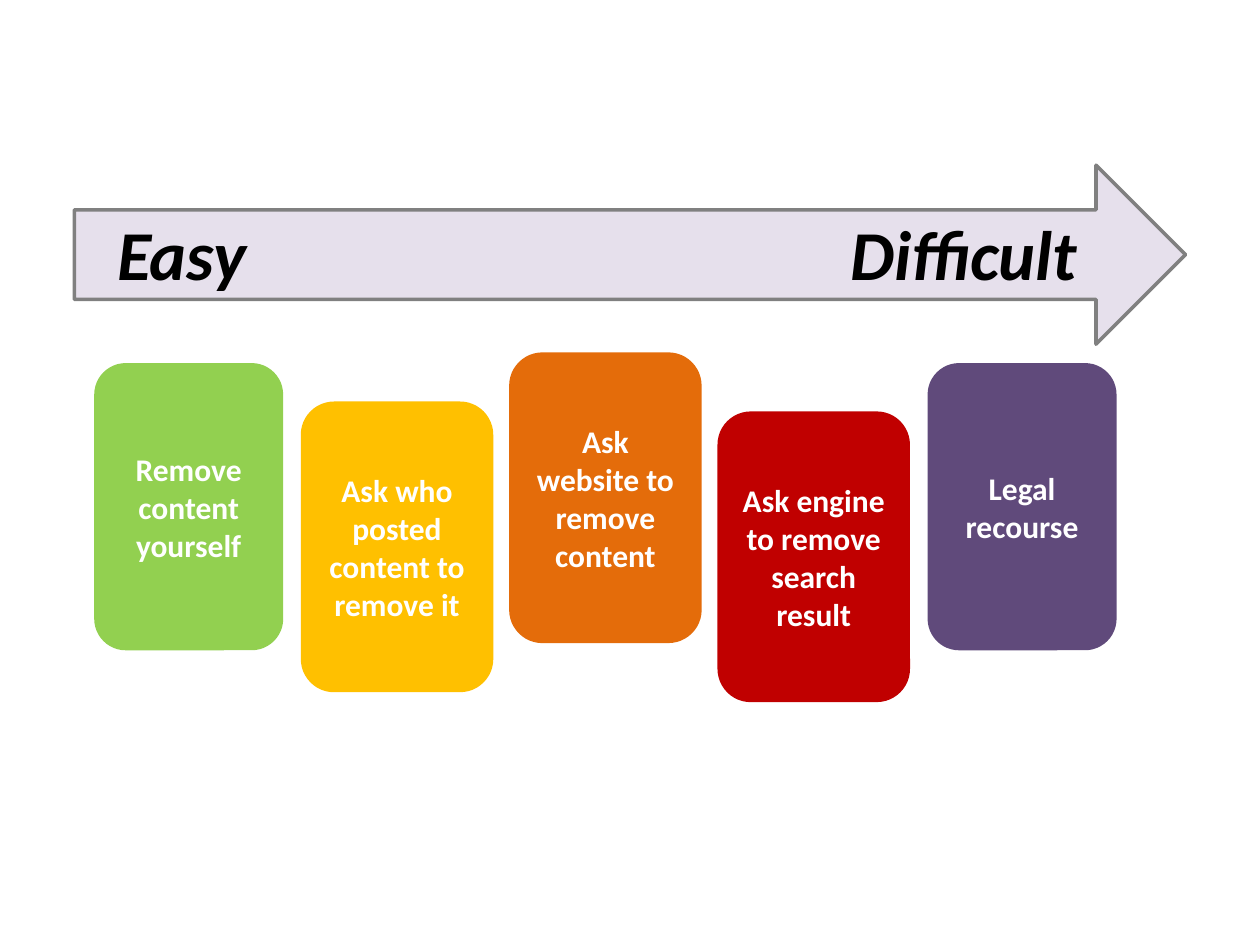
from dataclasses import dataclass

from pptx import Presentation
from pptx.dml.color import RGBColor as Rgb
from pptx.enum.shapes import MSO_SHAPE as Preset
from pptx.enum.text import MSO_ANCHOR as Anchor, PP_ALIGN as Align
from pptx.util import Cm, Pt


@dataclass(frozen=True)
class Theme:
    font: str = "Calibri"
    label_size: int = 40
    card_size: int = 18
    line_width: int = 2
    dark: str = "000000"
    light: str = "FFFFFF"
    arrow_fill: str = "E6E0EC"
    arrow_line: str = "808080"
    green: str = "92D050"
    yellow: str = "FFC000"
    orange: str = "E46C0A"
    red: str = "C00000"
    purple: str = "604A7B"


class SlideBuilder:
    def __init__(self, slide, theme):
        self.slide = slide
        self.theme = theme

    def shape(self, preset, left, top, width, height, fill, line=None):
        shape = self.slide.shapes.add_shape(
            preset, Cm(left), Cm(top), Cm(width), Cm(height))
        shape.shadow.inherit = False
        shape.fill.solid()
        shape.fill.fore_color.rgb = Rgb.from_string(fill)
        if line:
            shape.line.color.rgb = Rgb.from_string(line)
            shape.line.width = Pt(self.theme.line_width)
        else:
            shape.line.fill.background()
        return shape

    def set_text(self, shape, text, size, color, align, italic=False):
        shape.text_frame.text = text
        para = shape.text_frame.paragraphs[0]
        para.alignment = align
        font = para.runs[0].font
        font.name = self.theme.font
        font.size = Pt(size)
        font.bold = True
        font.italic = italic
        font.color.rgb = Rgb.from_string(color)

    def label(self, text, left, top, width, height):
        box = self.slide.shapes.add_textbox(
            Cm(left), Cm(top), Cm(width), Cm(height))
        box.text_frame.word_wrap = False
        self.set_text(box, text, self.theme.label_size, self.theme.dark,
                      Align.LEFT, italic=True)

    def card(self, text, left, top, width, height, fill, outlined):
        card = self.shape(Preset.ROUNDED_RECTANGLE, left, top, width, height,
                          fill, fill if outlined else None)
        card.text_frame.word_wrap = True
        card.text_frame.vertical_anchor = Anchor.MIDDLE
        self.set_text(card, text, self.theme.card_size, self.theme.light,
                      Align.CENTER)


def main():
    deck = Presentation()
    deck.slide_width, deck.slide_height = Cm(25.4), Cm(19.05)
    blank_layout = deck.slide_layouts[6]
    theme = Theme()
    page = SlideBuilder(deck.slides.add_slide(blank_layout), theme)

    page.shape(Preset.RIGHT_ARROW, 1.5, 3.33, 22.4, 3.61,
               theme.arrow_fill, theme.arrow_line)
    page.label("Easy", 2.11, 4.11, 3.12, 1.96)
    page.label("Difficult", 16.89, 4.11, 5.21, 1.96)

    first_left, step, width, height = 1.9, 4.2, 3.81, 5.79
    steps = [
        ("Remove content yourself", 7.32, theme.green, False),
        ("Ask who posted content to remove it", 8.13, theme.yellow, True),
        ("Ask website to remove content", 7.14, theme.orange, True),
        ("Ask engine to remove search result", 8.33, theme.red, True),
        ("Legal recourse", 7.32, theme.purple, False),
    ]
    for index, (text, top, fill, outlined) in enumerate(steps):
        page.card(text, first_left + index * step, top, width, height,
                  fill, outlined)

    deck.save("out.pptx")


if __name__ == "__main__":
    main()
